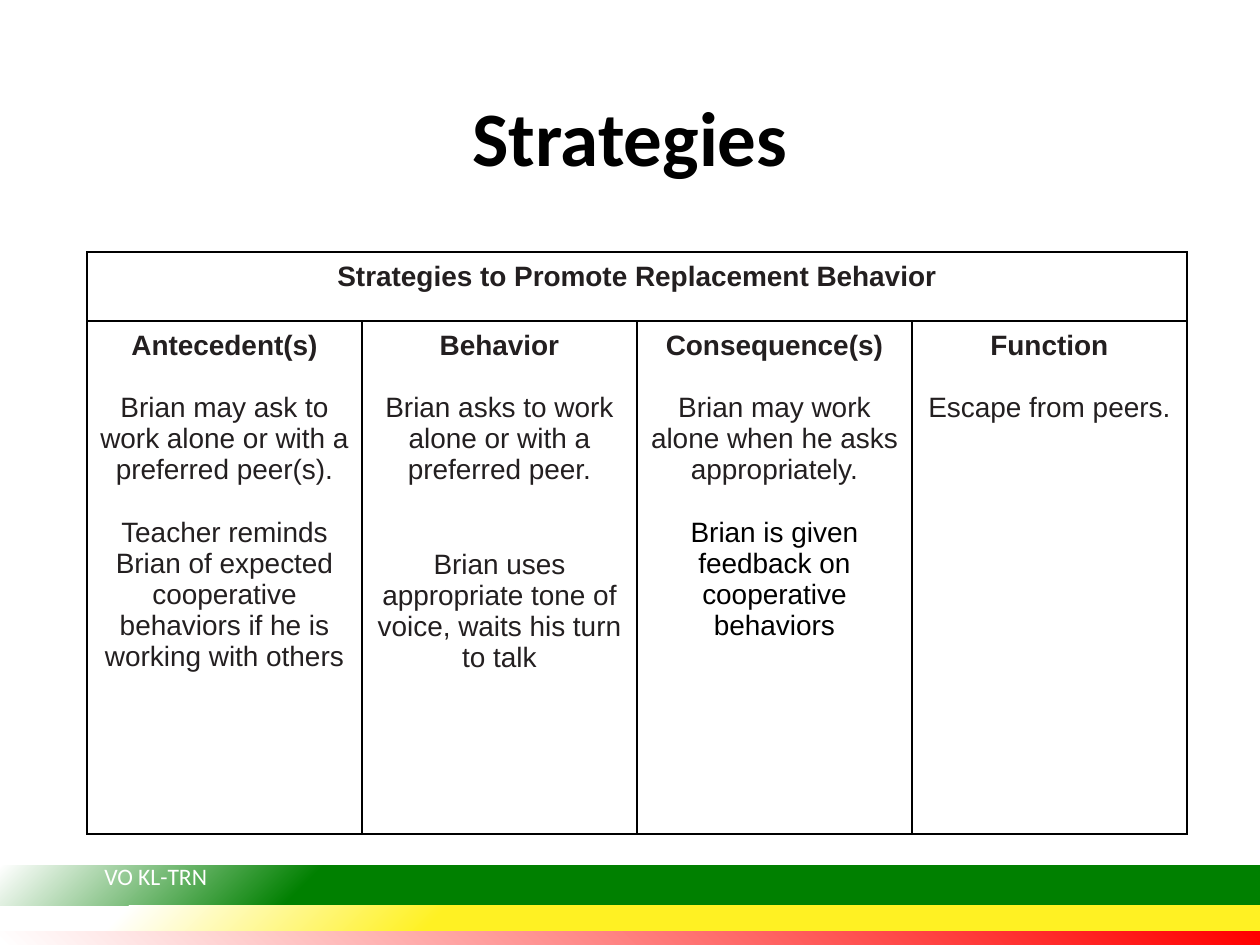
"""Build the Strategies slide: a title, a strategy table and a striped footer."""
from pptx import Presentation
from pptx.dml.color import RGBColor
from pptx.enum.shapes import MSO_SHAPE
from pptx.enum.text import MSO_ANCHOR, PP_ALIGN
from pptx.oxml import parse_xml
from pptx.oxml.ns import nsdecls
from pptx.util import Emu, Pt

SCALE = 914400 / 126
INK = "231F20"


def px(*lengths):
    return [Emu(round(length * SCALE)) for length in lengths]


def write(frame, text, size=16, font="Arial", color=INK, bold=False,
          align=PP_ALIGN.CENTER, before=0, spacing=None):
    para = frame.paragraphs[0] if not frame.text else frame.add_paragraph()
    para.alignment, para.space_before, para.line_spacing = align, Pt(before), spacing
    span = para.add_run()
    span.text = text
    span.font.size, span.font.name, span.font.bold = Pt(size), font, bold
    span.font.color.rgb = RGBColor.from_string(color)


deck = Presentation()
deck.slide_width, deck.slide_height = px(1260, 945)
page = deck.slides.add_slide(deck.slide_layouts[5])

stripes = [
    (931, 15, "t='0' b='100000'", [(0, "FF0000"), (100, "FFFFFF")]),
    (866, 40, "t='100000' b='0'", [(0, "008000"), (75, "008000"), (100, "FFFFFF")]),
    (906, 25, "t='100000' b='0'",
     [(0, "FFF123"), (65, "FFF123"), (90, "FFFFFF"), (100, "FFFFFF")]),
]
for top, height, focus, stops in stripes:
    stripe = page.shapes.add_shape(MSO_SHAPE.RECTANGLE, *px(0, top, 1260, height))
    stripe.shadow.inherit = False
    stripe.line.fill.background()
    stripe.fill.background()
    stop_xml = "".join(
        f"<a:gs pos='{position * 1000}'><a:srgbClr val='{color}'/></a:gs>"
        for position, color in stops)
    gradient = parse_xml(
        f"<a:gradFill {nsdecls('a')} rotWithShape='1'><a:gsLst>{stop_xml}</a:gsLst>"
        f"<a:path path='circle'><a:fillToRect l='100000' r='0' {focus}/></a:path>"
        "</a:gradFill>")
    properties = stripe.element.spPr
    properties.replace(properties.find("{*}noFill"), gradient)

footer = page.shapes.add_textbox(*px(92, 856, 242, 42)).text_frame
footer.word_wrap = True
write(footer, "VO KL-TRN", size=13.5, font="Calibri", color="FFFFFF", align=PP_ALIGN.LEFT)

title = page.shapes.title
title.left, title.top, title.width, title.height = px(87, 50, 1086, 183)
title.text_frame.vertical_anchor = MSO_ANCHOR.MIDDLE
write(title.text_frame, "Strategies", size=44, font="Calibri", color="000000",
      bold=True, spacing=0.9)

table = page.shapes.add_table(2, 4, *px(87, 252, 1100, 582)).table
table.first_row = table.horz_banding = False
for column in table.columns:
    column.width = px(275)[0]
for row, height in zip(table.rows, px(69, 513)):
    row.height = height
table.cell(0, 0).merge(table.cell(0, 3))

for cell in table.iter_cells():
    cell.margin_left, cell.margin_top, cell.margin_right, cell.margin_bottom = px(9, 9, 9, 9)
    properties = cell._tc.get_or_add_tcPr()
    for side in ("lnL", "lnR", "lnT", "lnB"):
        properties.append(parse_xml(
            f"<a:{side} {nsdecls('a')} w='12700'><a:solidFill><a:srgbClr val='000000'/>"
            f"</a:solidFill></a:{side}>"))
    cell.fill.background()

write(table.cell(0, 0).text_frame, "Strategies to Promote Replacement Behavior", bold=True)
strategies = [
    ("Antecedent(s)", [
        ("Brian may ask to work alone or with a preferred peer(s).", 18, INK),
        ("Teacher reminds Brian of expected cooperative behaviors if he is working with others",
         18, INK)]),
    ("Behavior", [
        ("Brian asks to work alone or with a preferred peer.", 18, INK),
        ("Brian uses appropriate tone of voice, waits his turn to talk", 36, INK)]),
    ("Consequence(s)", [
        ("Brian may work alone when he asks appropriately.", 18, INK),
        ("Brian is given feedback on cooperative behaviors", 18, "000000")]),
    ("Function", [("Escape from peers.", 18, INK)]),
]
for index, (heading, entries) in enumerate(strategies):
    frame = table.cell(1, index).text_frame
    write(frame, heading, bold=True)
    for text, gap, color in entries:
        write(frame, text, before=gap, color=color)

deck.save("out.pptx")
